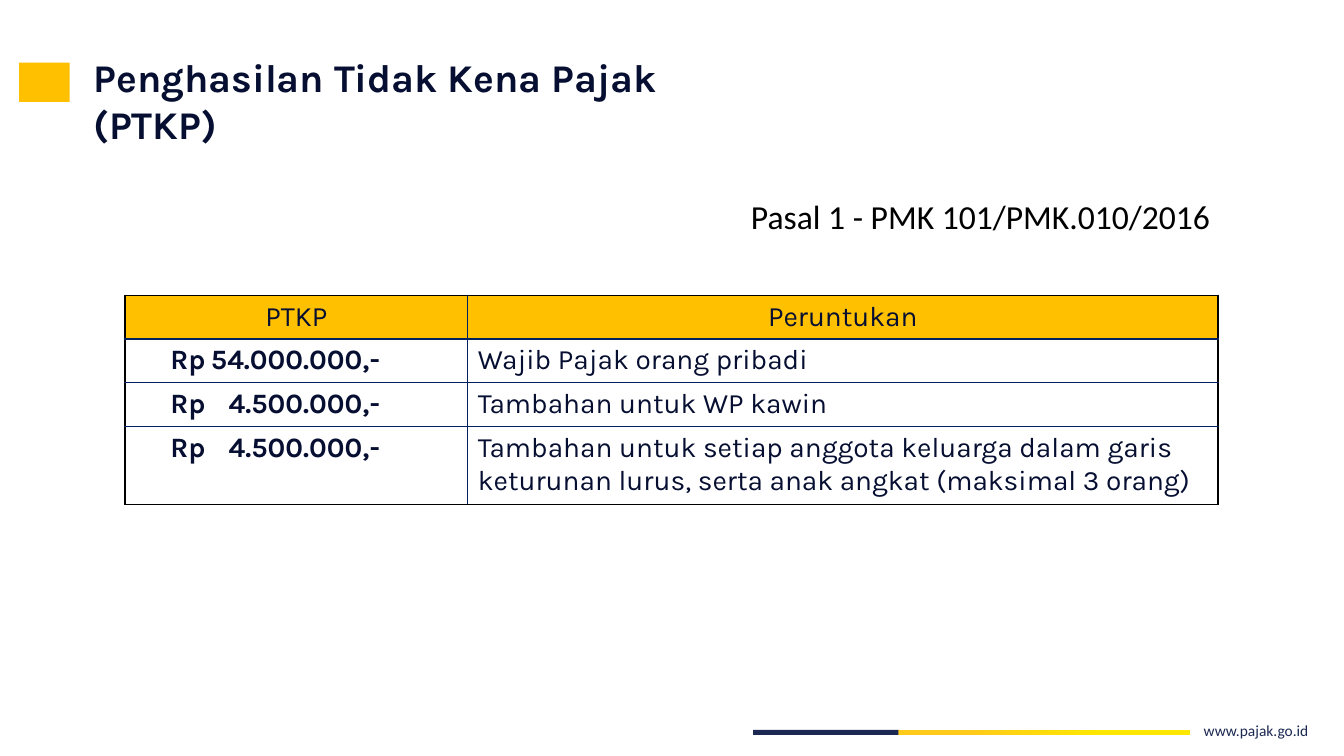
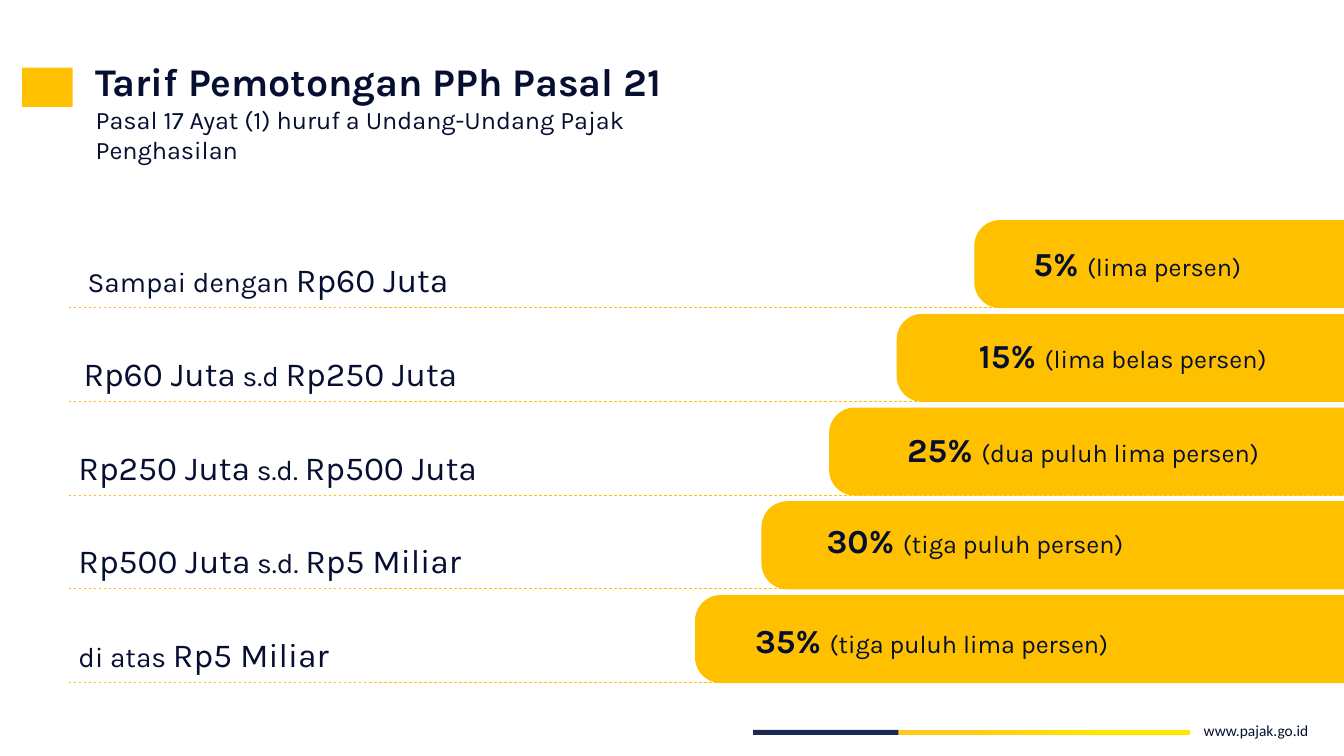
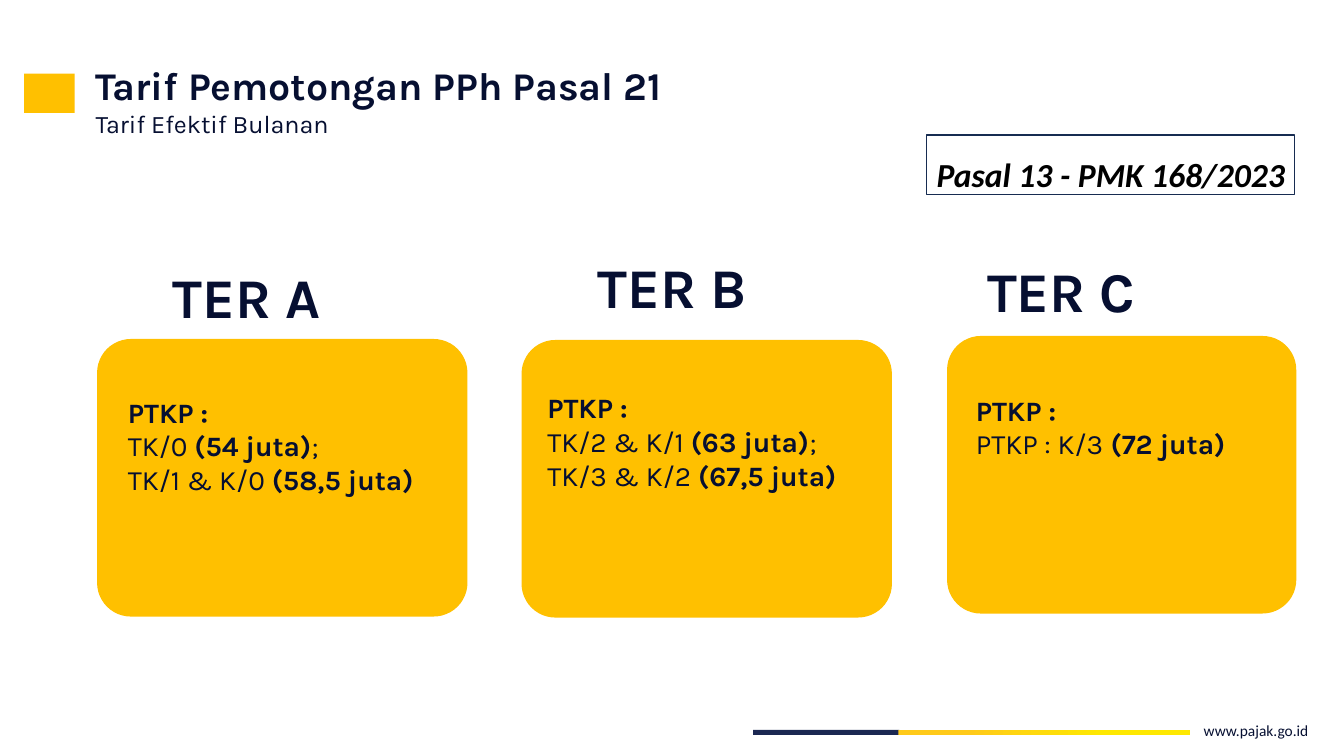
from lxml.etree import SubElement
from pptx import Presentation
from pptx.dml.color import RGBColor
from pptx.enum.dml import MSO_LINE
from pptx.enum.shapes import MSO_CONNECTOR, MSO_SHAPE
from pptx.enum.text import MSO_ANCHOR, PP_ALIGN
from pptx.oxml import parse_xml
from pptx.oxml.ns import nsdecls, qn
from pptx.util import Pt

PX = 9144
WIDTH, HEIGHT = 1333, 750
NAVY, GOLD, INDIGO, BORDER = "060F31", "FFC000", "1B2852", "002060"
BLACK, WHITE = "000000", "FFFFFF"
KARLA, CALIBRI = "Karla", "Calibri"


def px(*values):
    return [v * PX for v in values]


def rgb(value):
    return RGBColor.from_string(value)


def add_runs(p, runs, font=KARLA, color=NAVY, italic=False):
    for text, size, bold in runs:
        r = p.add_run()
        r.text = text
        r.font.size = Pt(size)
        r.font.bold = bold
        r.font.italic = italic
        r.font.name = font
        r.font.color.rgb = rgb(color)


def add_text(slide, box, paragraphs, align=PP_ALIGN.LEFT, **style):
    tf = slide.shapes.add_textbox(*px(*box)).text_frame
    tf.word_wrap = True
    for i, runs in enumerate(paragraphs):
        p = tf.paragraphs[0] if i == 0 else tf.add_paragraph()
        p.alignment = align
        add_runs(p, runs, **style)


def add_box(slide, box, fill=None, line=None, radius=None):
    kind = MSO_SHAPE.RECTANGLE if radius is None else MSO_SHAPE.ROUNDED_RECTANGLE
    sp = slide.shapes.add_shape(kind, *px(*box))
    sp.shadow.inherit = False
    if radius is not None:
        sp.adjustments[0] = radius
    if fill:
        sp.fill.solid()
        sp.fill.fore_color.rgb = rgb(fill)
    else:
        sp.fill.background()
    if line:
        sp.line.color.rgb = rgb(line)
        sp.line.width = Pt(1)
    else:
        sp.line.fill.background()
    return sp


def add_dashed_line(slide, x, y, right):
    line = slide.shapes.add_connector(MSO_CONNECTOR.STRAIGHT, *px(x, y, right, y))
    line.line.color.rgb = rgb(GOLD)
    line.line.width = Pt(0.5)
    line.line.dash_style = MSO_LINE.DASH
    SubElement(line._element.spPr, qn("a:effectLst"))


def add_header(slide, marker, title, paragraphs):
    add_box(slide, (*marker, 50, 39), GOLD)
    add_text(slide, title, paragraphs)


def add_footer(slide, x, y, color):
    add_box(slide, (x, y + 14, 145, 5), INDIGO)
    bar = add_box(slide, (x + 144, y + 14, 289, 5), GOLD)
    bar.fill.gradient()
    bar.fill.gradient_angle = 0
    stops = ((0.23, "FFCA1A"), (0.71, "FEE801"))
    for stop, (position, shade) in zip(bar.fill.gradient_stops, stops):
        stop.position = position
        stop.color.rgb = rgb(shade)
    add_text(slide, (x + 437, y, 145, 29), [[("www.pajak.go.id", 11, False)]],
             font=CALIBRI, color=color)


def set_borders(cell, colors):
    tcPr = cell._tc.get_or_add_tcPr()
    for i, (side, color) in enumerate(zip("LRTB", colors)):
        tcPr.insert(i, parse_xml(
            f'<a:ln{side} {nsdecls("a")} w="12700"><a:solidFill>'
            f'<a:srgbClr val="{color}"/></a:solidFill></a:ln{side}>'))


def add_tab(p, position):
    tabs = SubElement(p._p.get_or_add_pPr(), qn("a:tabLst"))
    SubElement(tabs, qn("a:tab"), pos=str(position * PX), algn="r")


def add_allowance_table(slide, box, widths, heights, rows):
    frame = slide.shapes.add_table(len(rows), len(widths), *px(*box))
    table = frame.table
    table.first_row = table.horz_banding = False
    for column, width in zip(table.columns, widths):
        column.width = width * PX
    for row, height in zip(table.rows, heights):
        row.height = height * PX
    last_row, last_col = len(rows) - 1, len(widths) - 1
    for i, values in enumerate(rows):
        for j, value in enumerate(values):
            cell = table.cell(i, j)
            cell.fill.solid()
            cell.fill.fore_color.rgb = rgb(WHITE if i else GOLD)
            edges = (j == 0, j == last_col, i == 0, i == last_row)
            set_borders(cell, [BLACK if edge else BORDER for edge in edges])
            p = cell.text_frame.paragraphs[0]
            p.alignment = PP_ALIGN.LEFT if i else PP_ALIGN.CENTER
            amount = i > 0 and j == 0
            if amount:
                cell.margin_left = 45 * PX
                add_tab(p, 208)
            add_runs(p, [(value, 20, amount)])


def add_rate_row(slide, x, y, label_x, label, bar_x, text_at, rate, words):
    add_dashed_line(slide, x, y, WIDTH)
    add_box(slide, (bar_x, y - 86, 1432 - bar_x, 86), GOLD, GOLD, 0.29)
    text_x, rise = text_at
    add_text(slide, (text_x, y - rise, WIDTH - text_x, 50),
             [[(rate + " ", 24, True), (f"({words})", 18, False)]])
    add_text(slide, (x + label_x, y - 53, 742, 50),
             [[(text, size, False) for text, size in label]])


def add_category_card(slide, box, name, name_at, text_at, lines):
    x, y, width, height = box
    add_box(slide, box, GOLD, GOLD, 0.12)
    add_text(slide, (x + name_at[0], y + name_at[1], 181, 77),
             [[(name + " ", 40, True)]], PP_ALIGN.CENTER)
    body = [[(text, 20, bold) for text, bold in line] for line in lines]
    add_text(slide, (x + text_at[0], y + text_at[1], width - 29, 120),
             [[("PTKP :", 20, True)]] + body)


def add_regulation_box(slide, box, text):
    tf = add_box(slide, box, line="172C51").text_frame
    tf.word_wrap = True
    tf.vertical_anchor = MSO_ANCHOR.TOP
    tf.margin_left, tf.margin_top, tf.margin_right, tf.margin_bottom = px(10, 19, 0, 0)
    p = tf.paragraphs[0]
    p.alignment = PP_ALIGN.LEFT
    add_runs(p, [(text, 24, True)], CALIBRI, BLACK, italic=True)


def build_allowance_slide(slide):
    add_header(slide, (19, 62), (83, 48, 629, 104),
               [[("Penghasilan Tidak Kena Pajak", 28, True)], [("(PTKP)", 28, True)]])
    add_text(slide, (735, 189, 483, 50), [[("Pasal 1 - PMK 101/PMK.010/2016", 24, False)]],
             font=CALIBRI, color=BLACK)
    add_allowance_table(slide, (124, 293, 1084, 207), (340, 744), (43, 43, 43, 77), [
        ("PTKP", "Peruntukan"),
        ("Rp\t54.000.000,-", "Wajib Pajak orang pribadi"),
        ("Rp\t4.500.000,-", "Tambahan untuk WP kawin"),
        ("Rp\t4.500.000,-", "Tambahan untuk setiap anggota keluarga dalam garis "
                            "keturunan lurus, serta anak angkat (maksimal 3 orang)"),
    ])
    add_footer(slide, 747, 710, INDIGO)


def build_rates_slide(slide):
    rows = [
        (9, [("Sampai dengan ", 20), ("Rp60 Juta", 24)],
         967, (1015, 69), "5%", "lima persen"),
        (5, [("Rp60 Juta", 24), (" s.d ", 20), ("Rp250 Juta", 24)],
         890, (961, 71), "15%", "lima belas persen"),
        (0, [("Rp250 Juta", 24), (" s.d. ", 20), ("Rp500 Juta", 24)],
         823, (890, 70), "25%", "dua puluh lima persen"),
        (0, [("Rp500 Juta", 24), (" s.d. ", 20), ("Rp5 Miliar", 24)],
         756, (810, 73), "30%", "tiga puluh persen"),
        (0, [("di atas ", 20), ("Rp5 Miliar", 24)],
         690, (739, 67), "35%", "tiga puluh lima persen"),
    ]
    for i, row in enumerate(rows):
        add_rate_row(slide, 68, 305 + 93 * i, *row)
    add_header(slide, (22, 67), (85, 52, 662, 118), [
        [("Tarif Pemotongan PPh Pasal 21", 28, True)],
        [("Pasal 17 Ayat (1) huruf a Undang-Undang Pajak Penghasilan", 18, False)]])
    add_footer(slide, 747, 710, NAVY)


def build_categories_slide(slide):
    cards = [
        ((97, 337, 366, 274), "TER A", (64, -81), (20, 50),
         [[("TK/0 ", False), ("(54 juta)", True), (";", False)],
          [("TK/1 & K/0 ", False), ("(58,5 juta)", True)]]),
        ((518, 338, 366, 274), "TER B", (58, -92), (15, 45),
         [[("TK/2 & K/1 ", False), ("(63 juta)", True), (";", False)],
          [("TK/3 & K/2 ", False), ("(67,5 juta)", True)]]),
        ((940, 334, 345, 274), "TER C", (29, -84), (18, 51),
         [[("PTKP : K/3", False), (" (72 juta)", True)]]),
    ]
    for card in cards:
        add_category_card(slide, *card)
    add_header(slide, (24, 73), (85, 56, 662, 88), [
        [("Tarif Pemotongan PPh Pasal 21", 28, True)],
        [("Tarif Efektif Bulanan", 18, False)]])
    add_regulation_box(slide, (919, 134, 365, 59), "Pasal 13 - PMK 168/2023")
    add_footer(slide, 747, 710, NAVY)


def main():
    prs = Presentation()
    prs.slide_width, prs.slide_height = px(WIDTH, HEIGHT)
    for build in (build_allowance_slide, build_rates_slide, build_categories_slide):
        build(prs.slides.add_slide(prs.slide_layouts[6]))
    prs.save("out.pptx")


if __name__ == "__main__":
    main()
